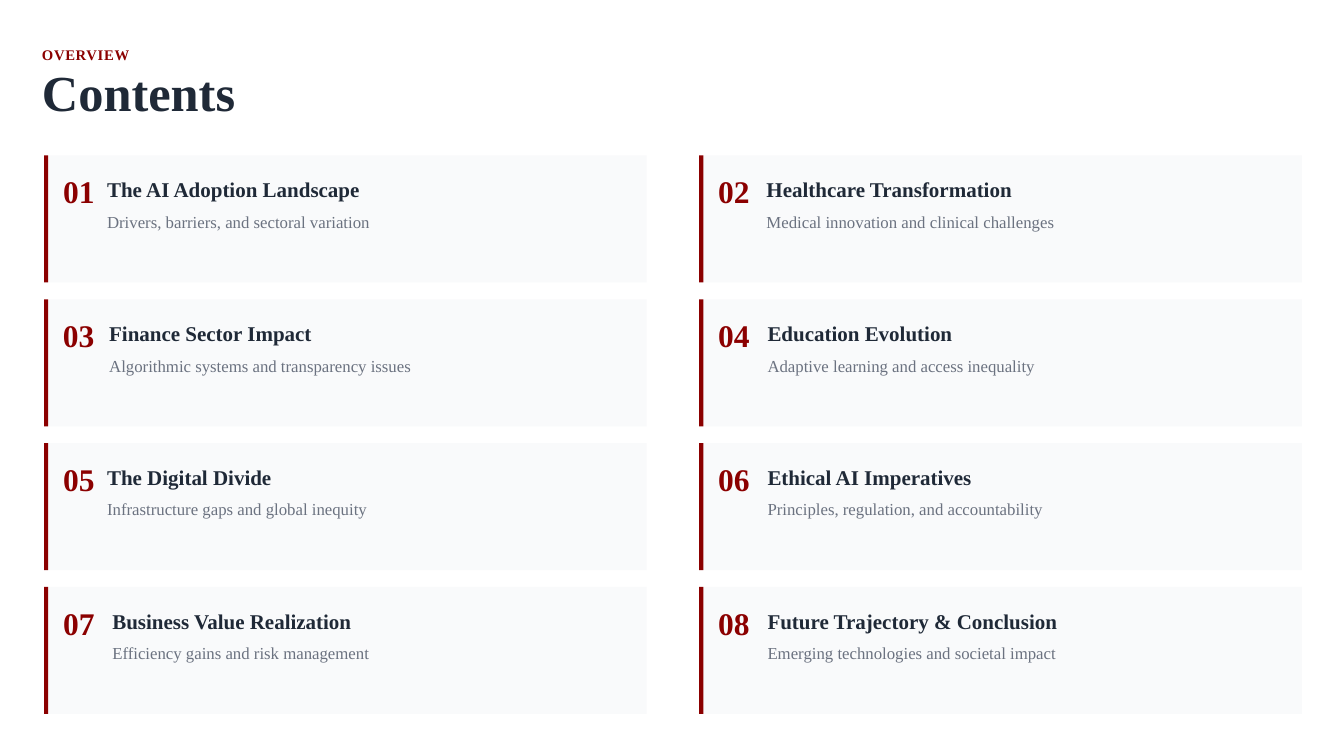
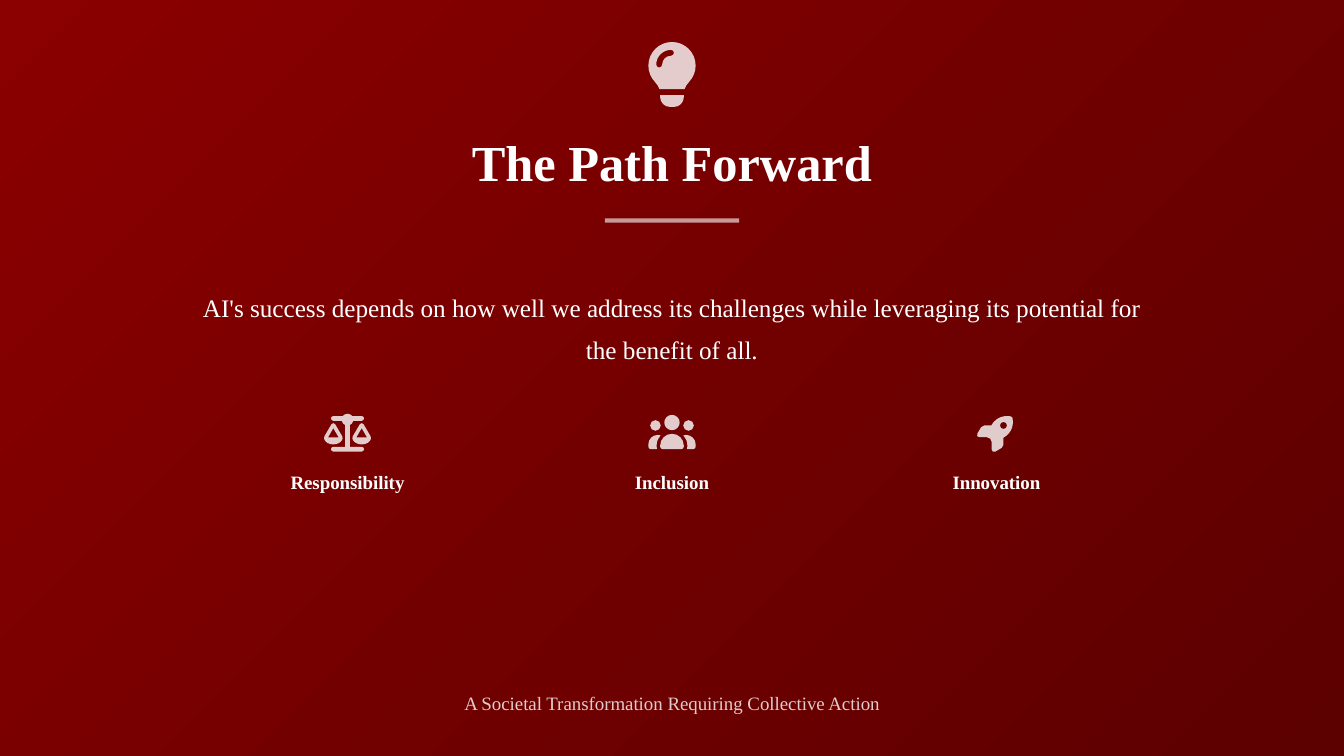
from lxml import etree

from pptx import Presentation
from pptx.dml.color import RGBColor
from pptx.enum import shapes, text
from pptx.oxml import ns
from pptx.util import Pt

PX = 9525
WIDTH, HEIGHT = 1280, 720
CENTER = WIDTH // 2
FONT = "Times New Roman"

CRIMSON = RGBColor(0x8B, 0x00, 0x00)
MAROON = RGBColor(0x5C, 0x00, 0x00)
INK = RGBColor(0x1F, 0x29, 0x37)
GRAY = RGBColor(0x6B, 0x72, 0x80)
CARD = RGBColor(0xF9, 0xFA, 0xFB)
WHITE = RGBColor(0xFF, 0xFF, 0xFF)

TITLE_STYLE = {"size": 36, "bold": True}

TOPICS = [
    ("The AI Adoption Landscape", "Drivers, barriers, and sectoral variation", 60),
    ("Healthcare Transformation", "Medical innovation and clinical challenges", 64),
    ("Finance Sector Impact", "Algorithmic systems and transparency issues", 62),
    ("Education Evolution", "Adaptive learning and access inequality", 65),
    ("The Digital Divide", "Infrastructure gaps and global inequity", 60),
    ("Ethical AI Imperatives", "Principles, regulation, and accountability", 65),
    ("Business Value Realization", "Efficiency gains and risk management", 65),
    ("Future Trajectory & Conclusion", "Emerging technologies and societal impact", 65),
]

ICON_GRID = 512
CIRCLE_HANDLE = 0.55

BULB_GLASS = """M 293 384 C 300 362 315 342 331 324 C 364 290 384 243 384 192
C 384 86 298 0 192 0 C 86 0 0 86 0 192 C 0 243 20 290 53 324
C 69 342 84 362 91 384 L 293 384"""
BULB_BASE = """M 288 432 L 96 432 L 96 448 C 96 492 132 528 176 528 L 208 528
C 252 528 288 492 288 448 L 288 432"""
BULB_GLINT = """M 184 112 C 144 112 112 144 112 184 C 112 197 101 208 88 208
C 75 208 64 197 64 184 C 64 118 118 64 184 64 C 197 64 208 75 208 88
C 208 101 197 112 184 112"""

SCALE_FRAME = """M 384 32 L 512 32 C 530 32 544 46 544 64 C 544 82 530 96 512 96
L 398 96 C 393 122 376 143 352 153 L 352 448 L 512 448
C 530 448 544 462 544 480 C 544 498 530 512 512 512 L 128 512
C 110 512 96 498 96 480 C 96 462 110 448 128 448 L 288 448 L 288 153
C 264 143 247 122 242 96 L 128 96 C 110 96 96 82 96 64
C 96 46 110 32 128 32 L 256 32 C 271 13 294 0 320 0 C 346 0 369 13 384 32"""
SCALE_PAN = """M 512 416 C 449 416 397 382 386 337 C 383 326 387 315 392 305
L 487 143 C 492 134 502 128 512 128 C 522 128 532 134 538 143 L 632 305
C 638 315 641 326 638 337 C 628 382 575 416 512 416"""
SCALE_OPENING = "M 440 320 L 584 320 L 512 196 L 440 320"

MIDDLE_BODY = """M 160 432 C 160 344 232 272 320 272 C 408 272 480 344 480 432
L 480 448 C 480 466 466 480 448 480 L 192 480 C 174 480 160 466 160 448
L 160 432"""
SIDE_BODY = """M 0 416 C 0 345 57 288 128 288 C 141 288 153 290 165 293
C 132 330 112 379 112 432 L 112 448 C 112 459 114 470 119 480 L 32 480
C 14 480 0 466 0 448 L 0 416"""

ROCKET_HULL = """M 128 320 L 24 320 C 0 320 -16 293 -3 272 L 50 183
C 59 169 74 160 91 160 L 186 160 C 262 31 376 25 452 36
C 465 38 475 48 476 60 C 487 136 481 250 352 326 L 352 421
C 352 438 343 453 329 462 L 241 515 C 219 528 192 512 192 487
L 192 384 C 192 349 163 320 128 320"""


def contour(outline):
    tokens = iter(outline.split())
    return [
        [(int(next(tokens)), int(next(tokens)))
         for _ in range(3 if command == "C" else 1)]
        for command in tokens
    ]


def circle(x, y, radius):
    handle = radius * CIRCLE_HANDLE
    segments = [[(x + radius, y)]]
    across, down = 1, 0
    for _ in range(4):
        turn_across, turn_down = -down, across
        segments.append([
            (x + across * radius + turn_across * handle,
             y + down * radius + turn_down * handle),
            (x + turn_across * radius + across * handle,
             y + turn_down * radius + down * handle),
            (x + turn_across * radius, y + turn_down * radius),
        ])
        across, down = turn_across, turn_down
    return segments


def with_mirror(contours, width):
    return contours + [
        [[(width - x, y) for x, y in segment] for segment in segments]
        for segments in contours
    ]


def icons():
    bulb = [contour(part) for part in (BULB_GLASS, BULB_BASE, BULB_GLINT)]
    pans = with_mirror([contour(SCALE_PAN), contour(SCALE_OPENING)], 640)
    scale = [contour(SCALE_FRAME), *pans]
    side_people = with_mirror([circle(96, 160, 72), contour(SIDE_BODY)], 640)
    people = [circle(320, 120, 104), contour(MIDDLE_BODY), *side_people]
    rocket = [contour(ROCKET_HULL), circle(352, 160, 48)]
    return bulb, scale, people, rocket


def set_opacity(element, percent):
    for color in element.iter(ns.qn("a:srgbClr")):
        alpha = etree.SubElement(color, ns.qn("a:alpha"))
        alpha.set("val", str(percent * 1000))


def paint(shape, color, opacity=100):
    shape.shadow.inherit = False
    shape.line.fill.background()
    shape.fill.solid()
    shape.fill.fore_color.rgb = color
    if opacity < 100:
        set_opacity(shape._element.spPr, opacity)


def add_rectangle(slide, left, top, width, height):
    return slide.shapes.add_shape(
        shapes.MSO_SHAPE.RECTANGLE, left * PX, top * PX, width * PX, height * PX
    )


def add_block(slide, left, top, width, height, color, opacity=100):
    paint(add_rectangle(slide, left, top, width, height), color, opacity)


def add_gradient_backdrop(slide):
    shape = add_rectangle(slide, 0, 0, WIDTH, HEIGHT)
    shape.shadow.inherit = False
    shape.line.fill.background()
    shape.fill.gradient()
    shape.fill.gradient_angle = 315
    for stop, color, position in zip(
        shape.fill.gradient_stops, (CRIMSON, MAROON), (0, 1)
    ):
        stop.color.rgb = color
        stop.position = position


def add_text(slide, left, top, width, height, words, size, color, bold=False,
             line_spacing=1.0, centered=False, tracking=0, opacity=100):
    box = slide.shapes.add_textbox(left * PX, top * PX, width * PX, height * PX)
    frame = box.text_frame
    frame.word_wrap = True
    frame.vertical_anchor = text.MSO_ANCHOR.MIDDLE
    frame.margin_left = frame.margin_right = 0
    frame.margin_top = frame.margin_bottom = 0
    paragraph = frame.paragraphs[0]
    paragraph.line_spacing = line_spacing
    paragraph.alignment = text.PP_ALIGN.CENTER if centered else text.PP_ALIGN.LEFT
    run = paragraph.add_run()
    run.text = words
    run.font.name = FONT
    run.font.size = Pt(size)
    run.font.bold = bold
    run.font.color.rgb = color
    properties = run._r.get_or_add_rPr()
    if tracking:
        properties.set("spc", str(tracking))
    if opacity < 100:
        set_opacity(properties, opacity)


def add_centered_text(slide, center, top, width, height, words, size, **style):
    add_text(slide, center - width // 2, top, width, height, words, size, WHITE,
             centered=True, **style)


def bend_segments(shape, contours):
    lines = iter(list(shape._element.iter(ns.qn("a:lnTo"))))
    for segments in contours:
        for segment in segments[1:]:
            group = [next(lines) for _ in segment]
            if len(group) == 1:
                continue
            outline = group[0].getparent()
            curve = outline.makeelement(ns.qn("a:cubicBezTo"))
            group[0].addprevious(curve)
            for line in group:
                curve.append(line[0])
                outline.remove(line)


def add_icon(slide, contours, center, top, size, grid_width):
    unit = size * PX / ICON_GRID
    left = center * PX - grid_width * unit / 2
    builder = None
    for segments in contours:
        start, *points = [
            (round(left + x * unit), round(top * PX + y * unit))
            for segment in segments for x, y in segment
        ]
        if builder is None:
            builder = slide.shapes.build_freeform(*start)
        else:
            builder.move_to(*start)
        builder.add_line_segments(points, close=True)
    shape = builder.convert_to_shape()
    bend_segments(shape, contours)
    paint(shape, WHITE, 80)


def add_topic_card(slide, left, top, number, title, summary, inset):
    add_block(slide, left, top, 574, 121, CARD)
    add_block(slide, left, top, 4, 121, CRIMSON)
    add_text(slide, left + 18, top + 16, inset - 19, 36, f"{number:02d}", 22.5,
             CRIMSON, bold=True)
    add_text(slide, left + inset, top + 16, 300, 28, title, 15, INK, bold=True,
             line_spacing=1.2)
    add_text(slide, left + inset, top + 48, 300, 24, summary, 12, GRAY,
             line_spacing=1.3)


def build_contents(slide):
    add_text(slide, 40, 40, 1207, 20, "OVERVIEW", 10.5, CRIMSON, bold=True,
             line_spacing=1.2, tracking=50)
    add_text(slide, 40, 68, 1224, 48, "Contents", color=INK, line_spacing=0.8,
             **TITLE_STYLE)
    for index, topic in enumerate(TOPICS):
        row, column = divmod(index, 2)
        add_topic_card(slide, 42 + 624 * column, 148 + 137 * row, index + 1, *topic)


def build_closing(slide):
    bulb, scale, people, rocket = icons()
    add_gradient_backdrop(slide)
    add_icon(slide, bulb, CENTER, 40, 60, 384)
    add_centered_text(slide, CENTER, 124, 398, 60, "The Path Forward", **TITLE_STYLE)
    add_block(slide, CENTER - 64, 208, 128, 4, WHITE, 60)
    add_centered_text(
        slide, CENTER, 268, 908, 78,
        "AI's success depends on how well we address its challenges while "
        "leveraging its potential for the benefit of all.",
        18, line_spacing=1.4,
    )
    pillars = [
        ("Responsibility", scale, 640),
        ("Inclusion", people, 640),
        ("Innovation", rocket, 512),
    ]
    for index, (label, contours, grid_width) in enumerate(pillars):
        center = CENTER + 309 * (index - 1)
        add_icon(slide, contours, center, 394, 36, grid_width)
        add_centered_text(slide, center, 442, 286, 28, label, 13.5, bold=True,
                          line_spacing=1.3)
    add_centered_text(slide, CENTER, 652, 440, 28,
                      "A Societal Transformation Requiring Collective Action",
                      13.5, line_spacing=1.3, opacity=80)


def main():
    presentation = Presentation()
    presentation.slide_width = WIDTH * PX
    presentation.slide_height = HEIGHT * PX
    blank = presentation.slide_layouts[6]
    for build in (build_contents, build_closing):
        build(presentation.slides.add_slide(blank))
    presentation.save("out.pptx")


if __name__ == "__main__":
    main()
